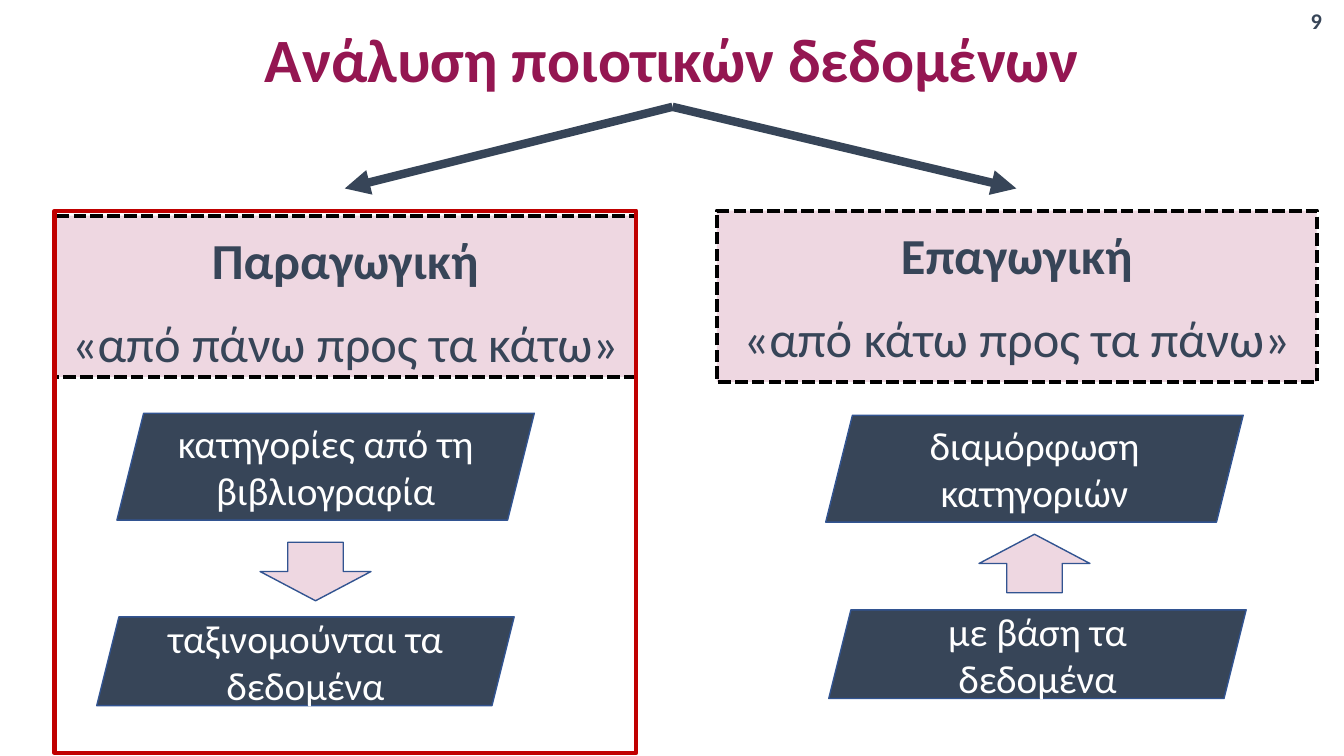
import pptx
import pptx.dml.color
import pptx.enum.dml
import pptx.enum.shapes
import pptx.enum.text
import pptx.oxml
import pptx.oxml.ns
import pptx.util
from pptx.util import Inches

COLORS = {
    "title": "941651", "navy": "374558", "pink": "EED7E1", "edge": "325491",
    "black": "000000", "white": "FFFFFF", "red": "C00000",
}
SHAPES = pptx.enum.shapes.MSO_SHAPE
ANCHOR = pptx.enum.text.MSO_ANCHOR
CENTER = pptx.enum.text.PP_ALIGN.CENTER
DASH = pptx.enum.dml.MSO_LINE.SQUARE_DOT


def color(name):
    return pptx.dml.color.RGBColor.from_string(COLORS[name])


class SlideBuilder:
    font = "Calibri"

    def __init__(self, deck):
        self.slide = deck.slides.add_slide(deck.slide_layouts[5])

    def set_text(self, shape, lines, size, ink, anchor=ANCHOR.MIDDLE, **spacing):
        """Fill a shape with centred paragraphs given as (text, bold)."""
        frame = shape.text_frame
        frame.word_wrap = True
        frame.auto_size = pptx.enum.text.MSO_AUTO_SIZE.NONE
        frame.vertical_anchor = anchor
        for index, (text, bold) in enumerate(lines):
            paragraph = frame.add_paragraph() if index else frame.paragraphs[0]
            for name, value in {"alignment": CENTER, **spacing}.items():
                setattr(paragraph, name, value)
            run = paragraph.add_run()
            run.text = text
            style = {"name": self.font, "size": pptx.util.Pt(size), "bold": bold}
            for name, value in style.items():
                setattr(run.font, name, value)
            run.font.color.rgb = color(ink)

    def title(self, text, left, top, width, height):
        heading = self.slide.shapes.title
        place = {"left": left, "top": top, "width": width, "height": height}
        for name, value in place.items():
            setattr(heading, name, Inches(value))
        self.set_text(heading, [(text, True)], 44, "title", line_spacing=0.9)

    def label(self, text, *box):
        caption = self.slide.shapes.add_textbox(*map(Inches, box))
        self.set_text(caption, [(text, True)], 16, "navy")

    def shape(self, kind, box, fill, edge, weight, dash=None):
        item = self.slide.shapes.add_shape(kind, *map(Inches, box))
        item.shadow.inherit = False
        if fill:
            item.fill.solid()
            item.fill.fore_color.rgb = color(fill)
        else:
            item.fill.background()
        item.line.color.rgb = color(edge)
        item.line.width = pptx.util.Pt(weight)
        if dash:
            item.line.dash_style = dash
        return item

    def approach(self, name, motto, *box):
        header = self.shape(SHAPES.RECTANGLE, box, "pink", "black", 3, DASH)
        self.set_text(header, [(name, True), (motto, False)], 36, "navy", ANCHOR.TOP,
                      line_spacing=1.14, space_before=pptx.util.Pt(10))

    def step(self, text, *box):
        stage = self.shape(SHAPES.PARALLELOGRAM, box, "navy", "edge", 1)
        self.set_text(stage, [(text, False)], 28, "white")

    def flow(self, left, top, rotation=0):
        arrow = self.shape(SHAPES.DOWN_ARROW, (left, top, 1.1, 0.58), "pink", "edge", 1)
        arrow.rotation = rotation

    def branch(self, *ends):
        arrow = self.slide.shapes.add_connector(
            pptx.enum.shapes.MSO_CONNECTOR.STRAIGHT, *map(Inches, ends))
        arrow.line.color.rgb = color("navy")
        arrow.line.width = pptx.util.Pt(6)
        namespace = pptx.oxml.ns.nsdecls("a")
        properties = arrow.element.spPr
        properties.get_or_add_ln().append(
            pptx.oxml.parse_xml(f'<a:tailEnd {namespace} type="triangle"/>'))
        properties.append(pptx.oxml.parse_xml(f"<a:effectLst {namespace}/>"))


def main():
    deck = pptx.Presentation()
    deck.slide_width, deck.slide_height = Inches(13.33), Inches(7.5)
    page = SlideBuilder(deck)

    # Title and page number
    page.title("Ανάλυση ποιοτικών δεδομένων", 0.92, 0.3, 11.5, 0.64)
    page.label("9", 12.78, 0, 0.55, 0.4)

    # Branches from the title to both approaches
    for target in (3.42, 10.08):
        page.branch(6.67, 1.06, target, 1.87)

    # Approach headers
    page.approach("Παραγωγική", "«από πάνω προς τα κάτω»", 0.54, 2.14, 5.77, 1.6)
    page.approach("Επαγωγική", "«από κάτω προς τα πάνω»", 7.11, 2.09, 5.95, 1.7)

    # Deductive steps, downwards
    page.step("κατηγορίες από τη βιβλιογραφία", 1.16, 4.1, 4.14, 1.06)
    page.flow(2.58, 5.38)
    page.step("ταξινομούνται τα δεδομένα", 0.96, 6.12, 4.14, 0.88)

    # Inductive steps, upwards
    page.step("με βάση τα δεδομένα", 8.22, 6.05, 4.14, 0.88)
    page.flow(9.71, 5.3, rotation=180)
    page.step("διαμόρφωση κατηγοριών", 8.19, 4.12, 4.14, 1.06)

    # Frame around the deductive approach
    page.shape(SHAPES.RECTANGLE, (0.54, 2.09, 5.77, 5.38), None, "red", 3)

    deck.save("out.pptx")


if __name__ == "__main__":
    main()
